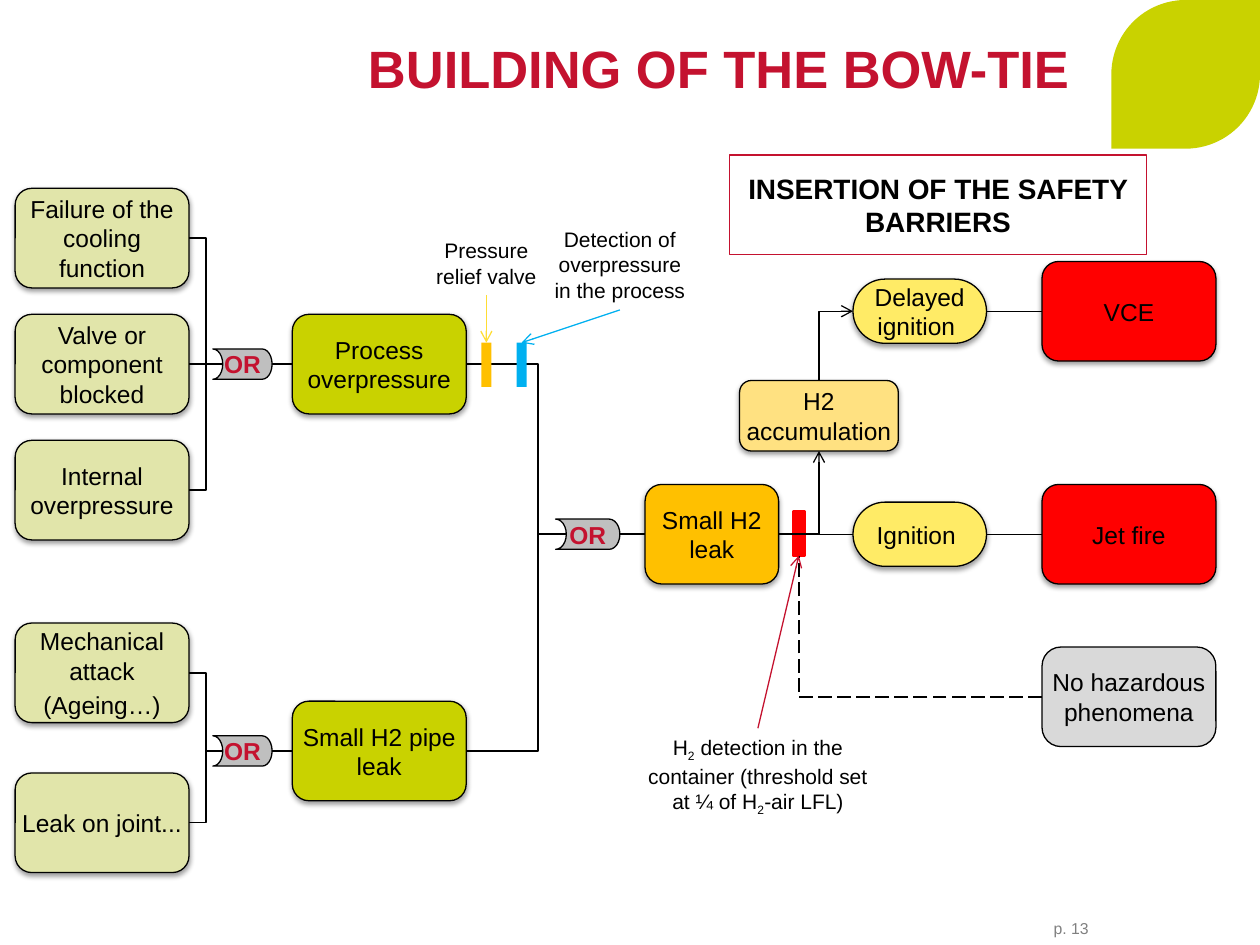
from lxml.etree import SubElement
from pptx import Presentation
from pptx.dml.color import RGBColor
from pptx.enum.dml import MSO_LINE
from pptx.enum.shapes import MSO_CONNECTOR, MSO_SHAPE
from pptx.enum.text import MSO_ANCHOR, MSO_AUTO_SIZE, PP_ALIGN
from pptx.oxml.ns import qn
from pptx.util import Inches, Pt

WIDE, TALL = 1.38, 0.79  # standard box
CAUSE, EVENT, LEAK, SPARK, EFFECT = 0.12, 2.32, 5.12, 6.77, 8.27  # column lefts
HIGH, MAIN, PIPE = 2.47, 4.24, 5.96  # row centres
STEP, FIRST = 1.0, 1.89  # pitch and first row of the overpressure causes
TOP, LEFT, BOTTOM, RIGHT = range(4)
BLACK, RED, CRIMSON = "000000", "FF0000", "C4122F"
LIME, PALE, GREY = "C9D200", "E1E5AA", "BFBFBF"
AMBER, YELLOW, BLUE = "FFC000", "FFEB66", "00B0F0"


def tint(code):
    return RGBColor.from_string(code)


def apply(item, values):
    for name, value in values.items():
        setattr(item, name, value)


def write(frame, text, size, color=BLACK, bold=False, align=PP_ALIGN.CENTER):
    """Lines become paragraphs; pieces between bars become subscripts."""
    for row, line in enumerate(text.split("\n")):
        para = frame.add_paragraph() if row else frame.paragraphs[0]
        para.alignment = align
        if row:
            para.space_before = Pt(size * 0.2)
        for part, piece in enumerate(line.split("|")):
            run = para.add_run()
            run.text = piece
            apply(run.font, {"name": "Arial", "size": Pt(size), "bold": bold})
            run.font.color.rgb = tint(color)
            if part % 2:
                run.font._element.set("baseline", "-25000")


def shape(slide, kind, x, y, w, h, fill=None, edge=BLACK, weight=0.75):
    item = slide.shapes.add_shape(kind, *map(Inches, (x, y, w, h)))
    item.shadow.inherit = False
    if fill:
        item.fill.solid()
        item.fill.fore_color.rgb = tint(fill)
    else:
        item.fill.background()
    if edge:
        item.line.color.rgb = tint(edge)
        item.line.width = Pt(weight)
    else:
        item.line.fill.background()
    return item


def label(item, text, size=14, **style):
    frame = item.text_frame
    apply(frame, {"margin_left": 0, "margin_right": 0, "margin_top": 0, "margin_bottom": 0,
                  "word_wrap": True, "vertical_anchor": MSO_ANCHOR.MIDDLE})
    write(frame, text, size, **style)


def shade(item):
    effects = item._element.spPr.find(qn("a:effectLst"))
    shadow = SubElement(effects, qn("a:outerShdw"), blurRad=str(Pt(3.1)),
                        dist=str(Pt(1.6)), dir="5400000", rotWithShape="0")
    color = SubElement(shadow, qn("a:srgbClr"), val=BLACK)
    SubElement(color, qn("a:alpha"), val="38000")


def box(slide, text, x, mid, fill, w=WIDE, h=TALL, curve=None, shadow=True):
    item = shape(slide, MSO_SHAPE.ROUNDED_RECTANGLE, x, mid - h / 2, w, h, fill)
    if curve:
        item.adjustments[0] = curve
    if shadow:
        shade(item)
    label(item, text)
    return item


def gate(slide, x, mid, w=0.47):
    item = shape(slide, MSO_SHAPE.FLOWCHART_STORED_DATA, x, mid - 0.12, w, 0.24, GREY)
    item._element.spPr.find(qn("a:xfrm")).set("flipH", "1")
    label(item, "OR", color=CRIMSON, bold=True)


def bar(slide, x, y, fill, edge=None):
    return shape(slide, MSO_SHAPE.RECTANGLE, x, y, 0.08, 0.35, fill, edge, 2)


def note(slide, text, x, y, w, h):
    item = slide.shapes.add_textbox(*map(Inches, (x, y, w, h)))
    item.text_frame.word_wrap = True
    write(item.text_frame, text, 12)
    return item


def wire(slide, start, end, color=BLACK, weight=0.75, bend=None, corner=False,
         dash=None, head=False, tail=False):
    """Each end is an (x, y) point or a (shape, side) pair."""
    kind = MSO_CONNECTOR.ELBOW if bend or corner else MSO_CONNECTOR.STRAIGHT
    fixed = [isinstance(spot[0], (int, float)) for spot in (start, end)]
    spots = [spot if free else (0, 0) for spot, free in zip((start, end), fixed)]
    item = slide.shapes.add_connector(kind, *(Inches(n) for spot in spots for n in spot))
    if not fixed[0]:
        item.begin_connect(*start)
    if not fixed[1]:
        item.end_connect(*end)
    item.line.color.rgb = tint(color)
    item.line.width = Pt(weight)
    if dash:
        item.line.dash_style = dash
    props = item._element.spPr
    form = props.find(qn("a:prstGeom"))
    if corner:
        form.set("prst", "bentConnector2")
    elif bend:
        SubElement(form.find(qn("a:avLst")), qn("a:gd"), name="adj1",
                   fmla=f"val {round(bend * 100000)}")
    for tag, shown in (("a:headEnd", head), ("a:tailEnd", tail)):
        if shown:
            SubElement(props.find(qn("a:ln")), qn(tag), type="arrow")
    SubElement(props, qn("a:effectLst"))


def banner(slide):
    leaf = shape(slide, MSO_SHAPE.ROUND_2_DIAG_RECTANGLE, 8.82, 0, 1.18, 1.18, LIME, None)
    leaf.adjustments[0] = 0.5
    title = slide.shapes.title
    apply(title, {"left": Inches(2.19), "top": Inches(0.28),
                  "width": Inches(6.3), "height": Inches(0.98)})
    apply(title.text_frame, {"margin_left": 0, "margin_right": 0, "margin_top": 0,
                             "margin_bottom": Inches(0.47), "word_wrap": True,
                             "auto_size": MSO_AUTO_SIZE.NONE,
                             "vertical_anchor": MSO_ANCHOR.BOTTOM})
    write(title.text_frame, "BUILDING OF THE BOW-TIE", 30, CRIMSON, True, PP_ALIGN.RIGHT)
    title.text_frame.paragraphs[0].line_spacing = 0.9
    page = slide.shapes.add_textbox(*map(Inches, (8.26, 7.3, 0.38, 0.14)))
    label(page, "p. 13", 9, color="808080", align=PP_ALIGN.RIGHT)
    apply(page.text_frame, {"word_wrap": False, "vertical_anchor": MSO_ANCHOR.BOTTOM})
    frame = shape(slide, MSO_SHAPE.RECTANGLE, 5.79, 1.23, 3.31, TALL, edge=CRIMSON)
    label(frame, "INSERTION OF THE SAFETY BARRIERS", 16, bold=True)


def causes(slide):
    names = ("Failure of the cooling function", "Valve or component blocked",
             "Internal overpressure")
    mid = FIRST + STEP
    rows = [FIRST + STEP * n for n in range(3)]
    boxes = [box(slide, name, CAUSE, row, PALE) for name, row in zip(names, rows)]
    process = box(slide, "Process overpressure", EVENT, mid, LIME)
    pipe = box(slide, "Small H2 pipe leak", EVENT, PIPE, LIME)
    wire(slide, (boxes[1], RIGHT), (process, LEFT), weight=1)
    # Branches into the two left gates
    for row in rows[::2]:
        wire(slide, (CAUSE + WIDE, row), (1.77, mid), weight=1, bend=0.5)
    for name, row in (("Mechanical attack\n(Ageing…)", 5.34), ("Leak on joint...", 6.53)):
        box(slide, name, CAUSE, row, PALE)
        wire(slide, (CAUSE + WIDE, row), (1.77, PIPE), bend=0.5)
    gate(slide, 1.69, mid)
    gate(slide, 1.69, PIPE)
    wire(slide, (2.16, PIPE), (pipe, LEFT))
    # Both events into the middle gate
    for row in (mid, PIPE):
        wire(slide, (EVENT + WIDE, row), (4.49, MAIN), weight=1, bend=0.72)
    gate(slide, 4.41, MAIN, 0.51)


def effects(slide):
    leak = box(slide, "Small H2 leak", LEAK, MAIN, AMBER, w=1.06)
    wire(slide, (4.92, MAIN), (leak, LEFT), weight=1)
    sparks = []
    for cause, effect, row in (("Ignition ", "Jet fire", MAIN),
                               ("Delayed ignition ", "VCE", HIGH)):
        spark = box(slide, cause, SPARK, row, YELLOW, 1.06, 0.51, 0.5)
        wire(slide, (spark, RIGHT), (box(slide, effect, EFFECT, row, RED), LEFT))
        sparks.append(spark)
    safe = box(slide, "No hazardous phenomena", EFFECT, 5.53, "D9D9D9",
               curve=0.19, shadow=False)
    store = box(slide, "H2 accumulation", 5.87, 3.3, "FFE181", 1.26, 0.56)
    stop = bar(slide, 6.3, 4.06, RED, RED)
    wire(slide, (leak, RIGHT), (sparks[0], LEFT))
    wire(slide, (leak, RIGHT), (store, BOTTOM), corner=True, tail=True)
    wire(slide, (sparks[1], LEFT), (store, TOP), corner=True, head=True)
    wire(slide, (safe, LEFT), (stop, BOTTOM), weight=1, corner=True, dash=MSO_LINE.LONG_DASH)
    return stop


def barriers(slide, stop):
    valve = bar(slide, 3.82, 2.72, AMBER)
    probe = bar(slide, 4.1, 2.72, BLUE)
    relief = note(slide, "Pressure relief valve", 3.31, 1.84, 1.1, 0.5)
    detect = note(slide, "Detection of overpressure in the process", 4.29, 1.75, 1.26, 0.71)
    gas = note(slide, "H|2| detection in the container (threshold set at ¼ of H|2|-air LFL)",
               4.97, 5.78, 2.09, 0.71)
    for start, end, color in (((relief, BOTTOM), (valve, TOP), "FFDD34"),
                              ((detect, BOTTOM), (probe, TOP), BLUE),
                              ((gas, TOP), (stop, BOTTOM), CRIMSON)):
        wire(slide, start, end, color, tail=True)


def main():
    deck = Presentation()
    apply(deck, {"slide_width": Inches(10), "slide_height": Inches(7.5)})
    slide = deck.slides.add_slide(deck.slide_layouts[5])
    banner(slide)
    causes(slide)
    stop = effects(slide)
    barriers(slide, stop)
    deck.save("out.pptx")


if __name__ == "__main__":
    main()
